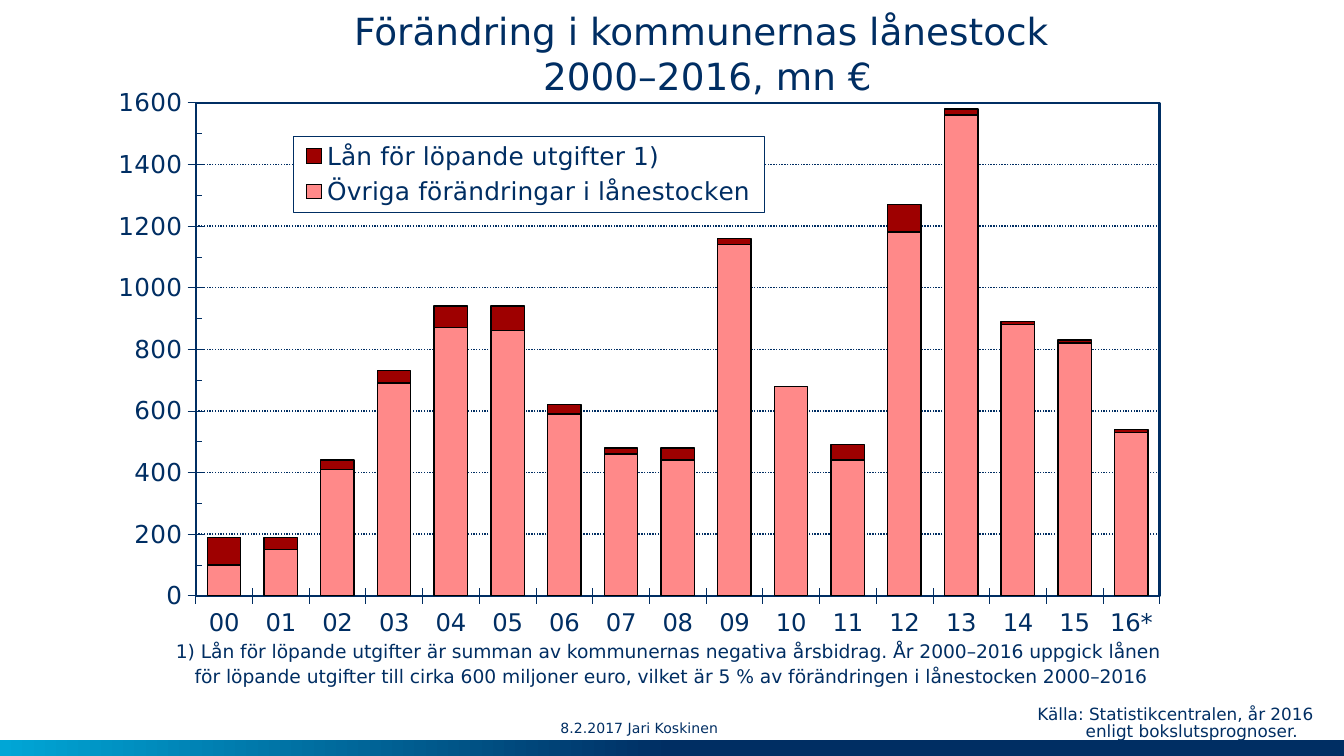
import pptx
import pptx.chart.data
import pptx.dml.color
import pptx.enum.chart
import pptx.enum.dml
import pptx.enum.shapes
import pptx.enum.text
import pptx.oxml
import pptx.oxml.ns
import pptx.util
from pptx.util import Inches

NAVY, CYAN, PINK, RED = "002E63", "00A6D6", "FF8989", "9E0000"
FONT = "DejaVu Sans"
YEARS = [f"{year:02d}" for year in range(16)] + ["16*"]
OTHER_CHANGES = [100, 150, 410, 690, 870, 860, 590, 460, 440,
                 1140, 680, 440, 1180, 1560, 880, 820, 530]
RUNNING_COSTS = [90, 40, 30, 40, 70, 80, 30, 20, 40,
                 20, 0, 50, 90, 20, 10, 10, 10]


def color(value):
    return pptx.dml.color.RGBColor.from_string(value)


def set_font(font, size):
    font.name = FONT
    font.size = pptx.util.Pt(size)
    font.bold = False
    font.color.rgb = color(NAVY)


def set_line(line, value, width):
    line.color.rgb = color(value)
    line.width = pptx.util.Pt(width)


def write_text(frame, lines, size, margins=(0, 0, 0, 0), indents=None, align="LEFT",
               anchor="TOP", line_spacing=1.0, space_before=0):
    """Fill a text frame; margins are left, top, right, bottom in inches."""
    frame.word_wrap = True
    frame.auto_size = pptx.enum.text.MSO_AUTO_SIZE.NONE
    frame.vertical_anchor = getattr(pptx.enum.text.MSO_ANCHOR, anchor)
    (frame.margin_left, frame.margin_top,
     frame.margin_right, frame.margin_bottom) = map(Inches, margins)
    for index, line in enumerate(lines):
        paragraph = frame.add_paragraph() if index else frame.paragraphs[0]
        if indents:
            properties = paragraph._p.get_or_add_pPr()
            properties.set("marL", str(Inches(indents[index])))
            properties.set("indent", "0")
        paragraph.text = line
        paragraph.alignment = getattr(pptx.enum.text.PP_ALIGN, align)
        paragraph.line_spacing = line_spacing
        paragraph.space_before = pptx.util.Pt(space_before if index else 0)
        for run in paragraph.runs:
            set_font(run.font, size)


def add_text(slide, box, lines, size, **formatting):
    shape = slide.shapes.add_textbox(*map(Inches, box))
    write_text(shape.text_frame, lines, size, **formatting)


def place_title(slide, box):
    title = slide.shapes.title
    title.left, title.top, title.width, title.height = map(Inches, box)
    write_text(title.text_frame, ["Förändring i kommunernas lånestock\v 2000–2016, mn €"],
               20, margins=(0, 0.05, 0, 0.05), align="CENTER", anchor="BOTTOM")


def add_bottom_band(slide, box):
    band = slide.shapes.add_shape(pptx.enum.shapes.MSO_SHAPE.RECTANGLE, *map(Inches, box))
    band.shadow.inherit = False
    band.line.fill.background()
    band.fill.gradient()
    band.fill.gradient_angle = 180
    for stop, position, value in zip(band.fill.gradient_stops, (0.5, 1), (NAVY, CYAN)):
        stop.position = position
        stop.color.rgb = color(value)


def chart_layout(x, y, width, height, target=""):
    """Manual layout, as fractions of the chart."""
    return pptx.oxml.parse_xml(
        f'<c:layout {pptx.oxml.ns.nsdecls("c")}><c:manualLayout>{target}'
        f'<c:xMode val="edge"/><c:yMode val="edge"/><c:x val="{x}"/><c:y val="{y}"/>'
        f'<c:w val="{width}"/><c:h val="{height}"/></c:manualLayout></c:layout>')


def frame_properties(fill, width):
    return pptx.oxml.parse_xml(
        f'<c:spPr {pptx.oxml.ns.nsdecls("c", "a")}>{fill}<a:ln w="{pptx.util.Pt(width)}">'
        f'<a:solidFill><a:srgbClr val="{NAVY}"/></a:solidFill></a:ln></c:spPr>')


def frame_chart_parts(chart):
    """Place and outline the plot area and the legend."""
    plot_area = chart.element.xpath(".//c:plotArea")[0]
    legend = chart.element.xpath(".//c:legend")[0]
    for part in (plot_area, legend):
        for layout in part.findall(pptx.oxml.ns.qn("c:layout")):
            part.remove(layout)
    plot_area.insert(0, chart_layout(0.07, 0.033, 0.875, 0.895,
                                     '<c:layoutTarget val="inner"/>'))
    plot_area.append(frame_properties("<a:noFill/>", 1.25))
    overlay = legend.find(pptx.oxml.ns.qn("c:overlay"))
    overlay.addprevious(chart_layout(0.159, 0.093, 0.427, 0.138))
    overlay.addnext(frame_properties(
        '<a:solidFill><a:srgbClr val="FFFFFF"/></a:solidFill>', 0.31))


def add_loan_chart(slide, box):
    data = pptx.chart.data.CategoryChartData(number_format="0")
    data.categories = YEARS
    data.add_series("Övriga förändringar i lånestocken", OTHER_CHANGES)
    data.add_series("Lån för löpande utgifter 1)", RUNNING_COSTS)
    chart = slide.shapes.add_chart(pptx.enum.chart.XL_CHART_TYPE.COLUMN_STACKED,
                                   *map(Inches, box), data).chart
    chart.has_title = False
    set_font(chart.font, 13)

    # Columns
    plot = chart.plots[0]
    plot.gap_width, plot.overlap, plot.vary_by_categories = 70, 100, False
    for series, value in zip(plot.series, (PINK, RED)):
        series.format.fill.solid()
        series.format.fill.fore_color.rgb = color(value)
        set_line(series.format.line, "000000", 0.75)

    # Axes
    tick_mark = pptx.enum.chart.XL_TICK_MARK
    for axis, size in ((chart.category_axis, 13), (chart.value_axis, 13.2)):
        axis.major_tick_mark = tick_mark.CROSS
        set_font(axis.tick_labels.font, size)
        set_line(axis.format.line, NAVY, 0.31)
    axis = chart.value_axis
    axis.minimum_scale, axis.maximum_scale = 0, 1600
    axis.major_unit, axis.minor_unit = 200, 100
    axis.minor_tick_mark = tick_mark.INSIDE
    axis.tick_labels.number_format = "0"
    axis.tick_labels.number_format_is_linked = False
    axis.has_major_gridlines = True
    grid = axis.major_gridlines.format.line
    set_line(grid, NAVY, 0.75)
    grid.dash_style = pptx.enum.dml.MSO_LINE.ROUND_DOT

    # Legend
    chart.has_legend = True
    chart.legend.include_in_layout = False
    set_font(chart.legend.font, 13.3)
    frame_chart_parts(chart)


def main():
    presentation = pptx.Presentation()
    presentation.slide_width = Inches(10)
    presentation.slide_height = Inches(10) * 9 // 16
    slide = presentation.slides.add_slide(presentation.slide_layouts[5])
    add_bottom_band(slide, (0, 5.51, 10, 0.12))
    add_loan_chart(slide, (0.88, 0.63, 8.2, 4.11))
    place_title(slide, (1.47, 0.04, 7.5, 0.74))

    # Date and author
    add_text(slide, (4.17, 5.31, 1.36, 0.21), ["8.2.2017 Jari Koskinen"], 7.5,
             anchor="MIDDLE")
    # Footnote
    add_text(slide, (1.13, 4.6, 7.84, 0.57),
             ["1) Lån för löpande utgifter är summan av kommunernas negativa årsbidrag. "
              "År 2000–2016 uppgick lånen",
              "för löpande utgifter till cirka 600 miljoner euro, vilket är 5 % av "
              "förändringen i lånestocken 2000–2016"],
             10, margins=(0.1, 0.16, 0, 0), indents=(0.08, 0.22), space_before=1.5)
    # Source
    add_text(slide, (7.62, 5.21, 2.45, 0.36),
             ["Källa: Statistikcentralen, år 2016", "enligt bokslutsprognoser."],
             9, margins=(0.1, 0.05, 0.1, 0.05), indents=(0, 0.36), line_spacing=0.85)
    presentation.save("out.pptx")


if __name__ == "__main__":
    main()
